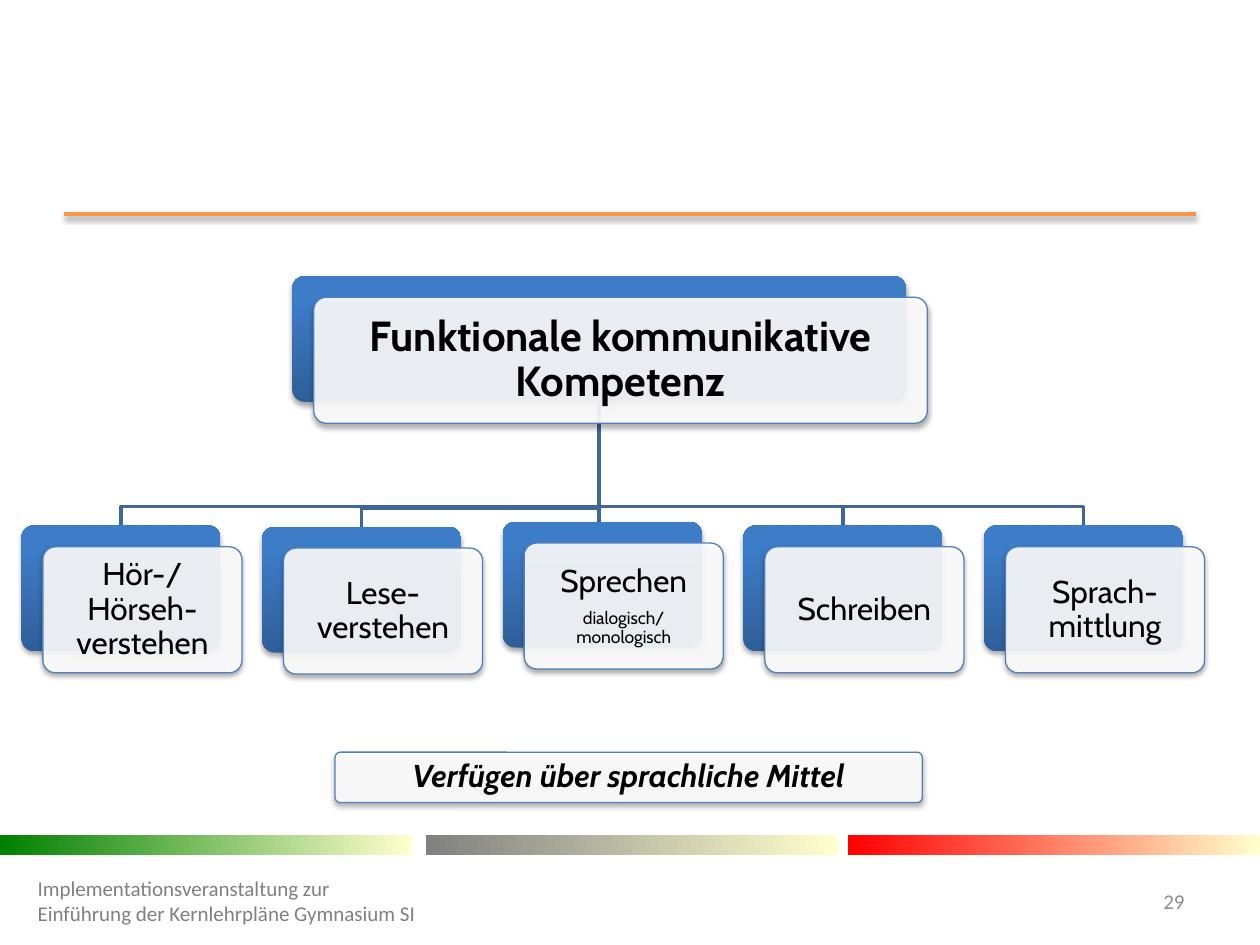
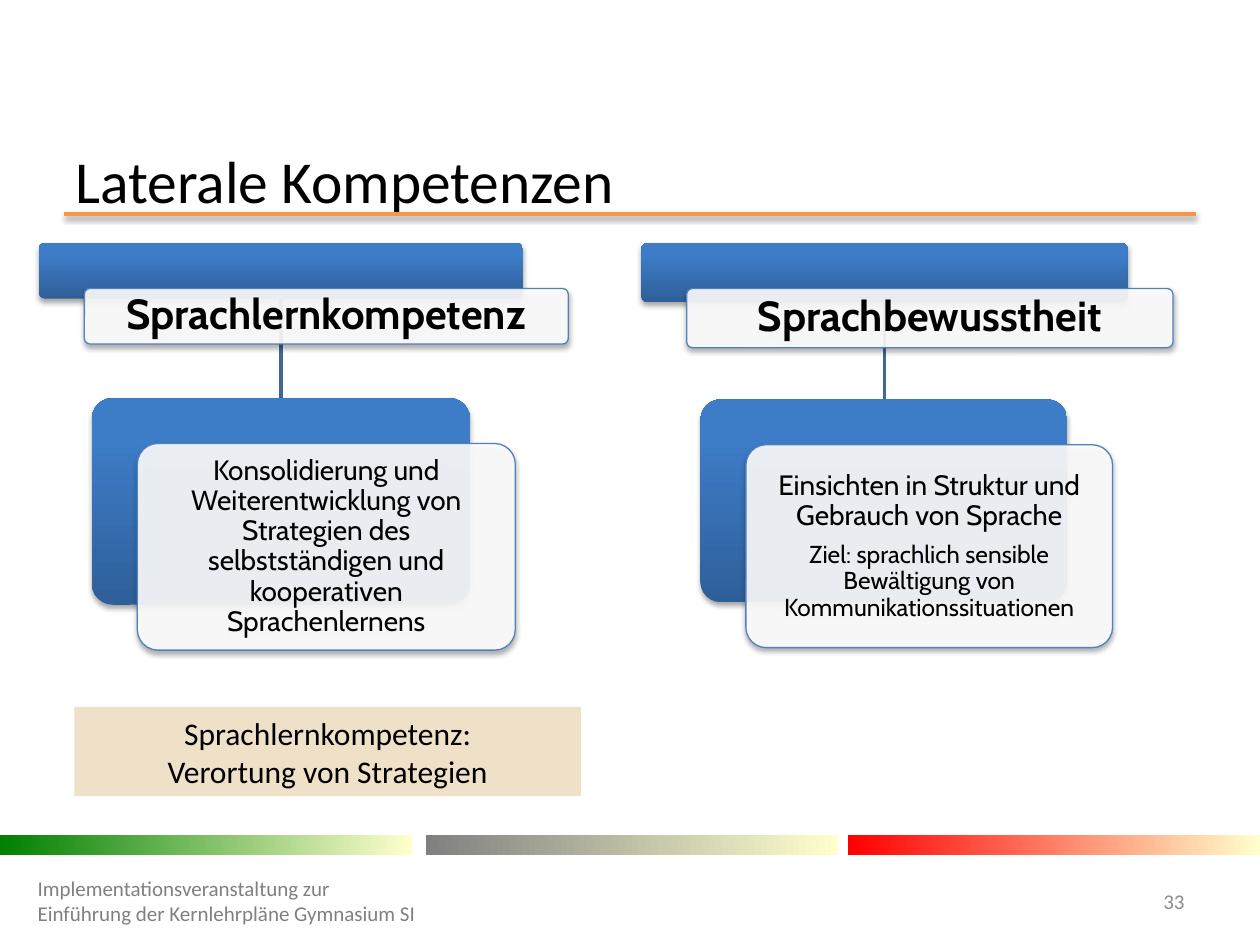
"""Builds two slides on communicative and lateral language competences."""
from lxml import etree
from pptx import Presentation
from pptx import util as u
from pptx.dml.color import RGBColor
from pptx.enum import shapes, text
from pptx.oxml.ns import qn

BLACK, WHITE, SAND = "000000", "FFFFFF", "EFE0C8"
ORANGE, BRANCH_BLUE, EDGE_BLUE = "F79646", "3F6797", "4F81BD"
DARK_BLUE, LIGHT_BLUE = "2F5F99", "3D7CC7"
FOOTER_GREY, NUMBER_GREY = "808080", "8C8C8C"
BAND_END = "FFFFCC"
BAND_STARTS = [(0, "008000"), (3.38, "808080"), (6.73, "FF0000")]
FOOTER = "Implementationsveranstaltung zur Einführung der Kernlehrpläne Gymnasium SI"
BAR_GAP = 0.15


def rgb(value):
    return RGBColor.from_string(value)


def inches(*values):
    return [u.Inches(value) for value in values]


class Deck:
    def __init__(self):
        self.prs = Presentation()
        self.prs.slide_width, self.prs.slide_height = inches(10, 7.5)
        self.slide = None

    def new_slide(self, number, title=None):
        layout = self.prs.slide_layouts[5 if title else 6]
        self.slide = self.prs.slides.add_slide(layout)
        rule = self.line((0.51, 1.7), (9.49, 1.7), ORANGE)
        self.shadow(rule.find(qn("a:effectLst")), 38, 1.6)
        for left, start in BAND_STARTS:
            band = self.block((left, 6.63, 3.27, 0.16))
            self.gradient(band, start, BAND_END, 1, 0)
        if title:
            self.title(title)
        self.label((0.2, 6.95, 3.24, 0.4), FOOTER, FOOTER_GREY, text.PP_ALIGN.LEFT)
        self.label((8.86, 6.95, 0.64, 0.4), number, NUMBER_GREY, text.PP_ALIGN.RIGHT)

    def title(self, wording):
        heading = self.slide.shapes.title
        heading.left, heading.top, heading.width, heading.height = inches(0.5, 1.23, 9, 0.39)
        heading.text_frame.auto_size = text.MSO_AUTO_SIZE.NONE
        self.set_lines(heading.text_frame, [(wording, 34)], align=text.PP_ALIGN.LEFT)

    def label(self, box, wording, color, align):
        frame = self.slide.shapes.add_textbox(*inches(*box)).text_frame
        self.set_lines(frame, [(wording, 12)], color=color, align=align)

    def set_lines(self, frame, lines, font="Calibri", color=BLACK, bold=False, italic=False,
                  align=text.PP_ALIGN.CENTER, spacing=1.0, gap=0):
        frame.word_wrap = True
        frame.vertical_anchor = text.MSO_ANCHOR.MIDDLE
        for index, (wording, size) in enumerate(lines):
            paragraph = frame.paragraphs[0] if index == 0 else frame.add_paragraph()
            paragraph.text = wording
            paragraph.alignment = align
            paragraph.line_spacing = spacing
            if index:
                paragraph.space_before = u.Pt(gap)
            paragraph.font.name = font
            paragraph.font.size = u.Pt(size)
            paragraph.font.bold = bold
            paragraph.font.italic = italic
            paragraph.font.color.rgb = rgb(color)

    def block(self, box, kind=shapes.MSO_SHAPE.RECTANGLE):
        block = self.slide.shapes.add_shape(kind, *inches(*box))
        block.shadow.inherit = False
        block.line.fill.background()
        return block

    def gradient(self, block, start, end, end_position, angle):
        block.fill.gradient()
        block.fill.gradient_angle = angle
        first, last = block.fill.gradient_stops
        first.color.rgb, first.position = rgb(start), 0
        last.color.rgb, last.position = rgb(end), end_position

    def shadow(self, effects, opacity, distance):
        outer = etree.SubElement(
            effects, qn("a:outerShdw"), blurRad=str(u.Pt(3.1)), dist=str(u.Pt(distance)),
            dir="5400000", rotWithShape="0")
        color = etree.SubElement(outer, qn("a:srgbClr"), val=BLACK)
        etree.SubElement(color, qn("a:alpha"), val=str(opacity * 1000))

    def rounded(self, box):
        card = self.block(box, shapes.MSO_SHAPE.ROUNDED_RECTANGLE)
        card.adjustments[0] = 0.1
        self.shadow(card.element.spPr.find(qn("a:effectLst")), 35, 1.8)
        return card

    def card(self, box, lines, inset=0.07, bold=False, italic=False):
        card = self.rounded(box)
        card.fill.solid()
        card.fill.fore_color.rgb = rgb(WHITE)
        fill = card.element.spPr.find(qn("a:solidFill")).find(qn("a:srgbClr"))
        etree.SubElement(fill, qn("a:alpha"), val="90000")
        card.line.color.rgb = rgb(EDGE_BLUE)
        card.line.width = u.Pt(0.75)
        frame = card.text_frame
        frame.margin_left = frame.margin_right = u.Inches(inset)
        frame.margin_top = frame.margin_bottom = u.Inches(inset)
        self.set_lines(frame, lines, "Cabin", bold=bold, italic=italic, spacing=0.9, gap=6)

    def node(self, box, lines, offset, **style):
        self.gradient(self.rounded(box), DARK_BLUE, LIGHT_BLUE, 0.8, 90)
        left, top, width, height = box
        self.card((left + offset, top + offset, width, height), lines, **style)

    def line(self, start, end, color):
        line = self.slide.shapes.add_connector(
            shapes.MSO_CONNECTOR.STRAIGHT, *inches(*start, *end))
        line.line.color.rgb = rgb(color)
        line.line.width = u.Pt(2)
        properties = line.element.spPr
        etree.SubElement(properties, qn("a:effectLst"))
        return properties

    def branch(self, parent, child):
        x, y = parent[0] + parent[2] / 2, parent[1] + parent[3]
        child_x, child_y = child[0] + child[2] / 2, child[1]
        if abs(child_x - x) < 0.05:
            self.line((x, y), (x, child_y), BRANCH_BLUE)
            return
        bar_y = child_y - BAR_GAP
        builder = self.slide.shapes.build_freeform(*inches(x, y))
        bends = [(x, bar_y), (child_x, bar_y), (child_x, child_y)]
        builder.add_line_segments([inches(*bend) for bend in bends], close=False)
        elbow = builder.convert_to_shape()
        elbow.shadow.inherit = False
        elbow.fill.background()
        elbow.line.color.rgb = rgb(BRANCH_BLUE)
        elbow.line.width = u.Pt(2)

    def tree(self, root, root_lines, children, offset):
        for box, _ in reversed(children):
            self.branch(root, box)
        self.node(root, root_lines, offset, inset=0.1, bold=True)
        for box, lines in children:
            self.node(box, lines, offset)

    def note(self, box, lines):
        note = self.block(box)
        note.fill.solid()
        note.fill.fore_color.rgb = rgb(SAND)
        self.set_lines(note.text_frame, lines)


def functional_slide(deck):
    deck.new_slide("29")
    skills = [
        (4.17, [("Hör-/Hörseh-verstehen", 18)]),
        (4.18, [("Lese-verstehen", 18)]),
        (4.14, [("Sprechen", 18), ("dialogisch/\vmonologisch", 10)]),
        (4.17, [("Schreiben", 18)]),
        (4.17, [("Sprach-mittlung", 18)]),
    ]
    children = [((0.17 + 1.91 * column, top, 1.58, 1), lines)
                for column, (top, lines) in enumerate(skills)]
    deck.tree((2.32, 2.19, 4.87, 1), [("Funktionale kommunikative Kompetenz", 24)],
              children, 0.17)
    deck.card((2.66, 5.97, 4.66, 0.4), [("Verfügen über sprachliche Mittel", 18)],
              inset=0.06, bold=True, italic=True)


def lateral_slide(deck):
    deck.new_slide("33", "Laterale Kompetenzen")
    strategies = [("Konsolidierung und Weiterentwicklung von Strategien des "
                   "selbstständigen und kooperativen Sprachenlernens", 16)]
    insights = [("Einsichten in Struktur und Gebrauch von Sprache", 16),
                ("Ziel: sprachlich sensible Bewältigung von Kommunikationssituationen", 14)]
    deck.tree((0.31, 1.93, 3.84, 0.44), [("Sprachlernkompetenz", 24)],
              [((0.73, 3.16, 3, 1.64), strategies)], 0.36)
    deck.tree((5.09, 1.93, 3.86, 0.47), [("Sprachbewusstheit", 24)],
              [((5.56, 3.17, 2.91, 1.61), insights)], 0.36)
    deck.note((0.59, 5.61, 4.02, 0.71),
              [("Sprachlernkompetenz:", 18), ("Verortung von Strategien", 18)])


def main():
    deck = Deck()
    functional_slide(deck)
    lateral_slide(deck)
    deck.prs.save("out.pptx")


if __name__ == "__main__":
    main()
